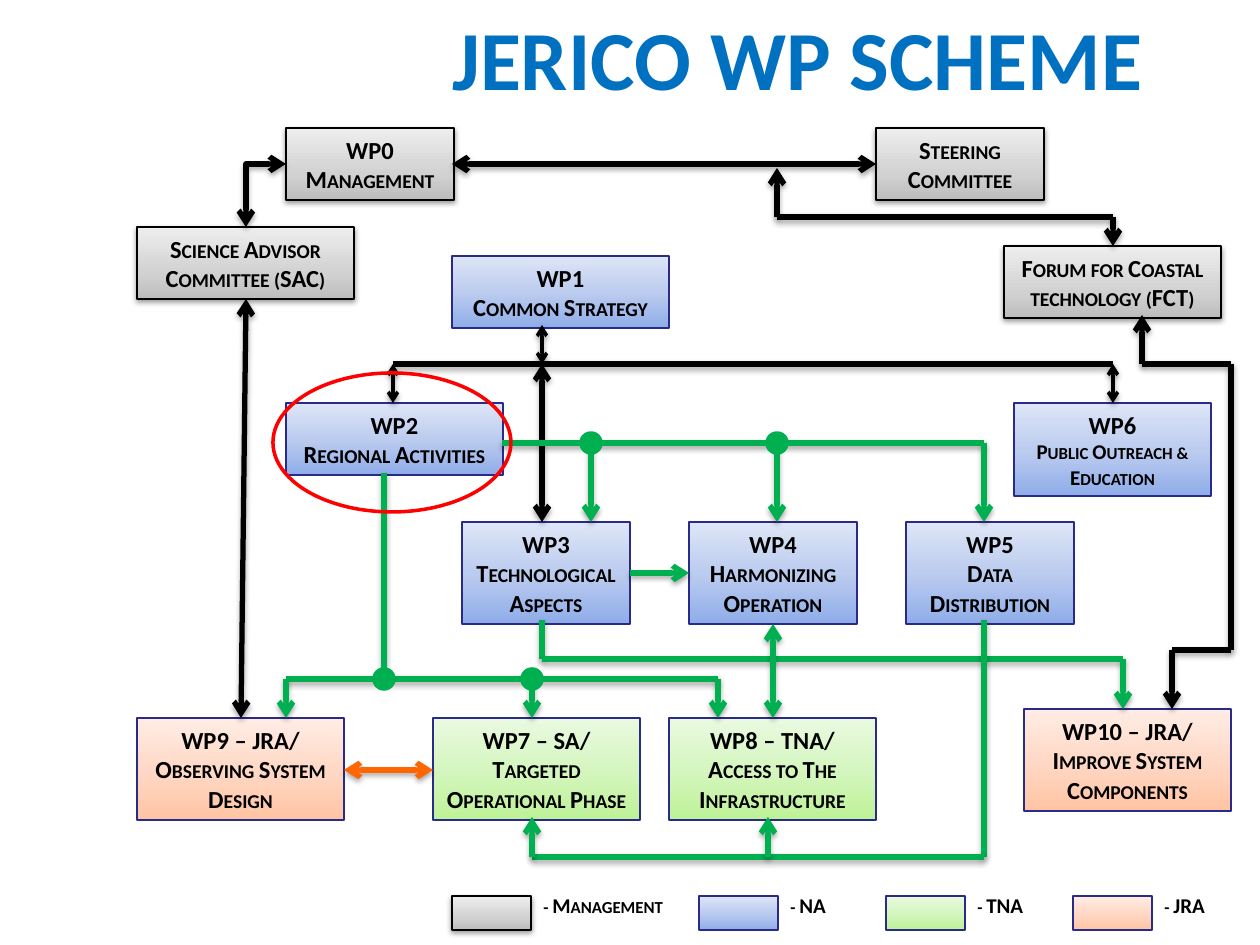
"""Build the JERICO work package scheme slide."""
from copy import deepcopy

from lxml import etree
from pptx import Presentation
from pptx.dml.color import RGBColor
from pptx.enum.shapes import MSO_CONNECTOR, MSO_SHAPE
from pptx.enum.text import MSO_ANCHOR, PP_ALIGN
from pptx.oxml.ns import qn
from pptx.util import Emu, Pt

RECTANGLE, OVAL = MSO_SHAPE.RECTANGLE, MSO_SHAPE.OVAL
JUNCTION = MSO_SHAPE.FLOWCHART_CONNECTOR
STRAIGHT, ELBOW = MSO_CONNECTOR.STRAIGHT, MSO_CONNECTOR.ELBOW
CENTER, LEFT = PP_ALIGN.CENTER, PP_ALIGN.LEFT
TOP = MSO_ANCHOR.TOP

BLACK = RGBColor(0x00, 0x00, 0x00)
NAVY = RGBColor(0x2A, 0x2A, 0x89)
GREEN = RGBColor(0x00, 0xB0, 0x50)
ORANGE = RGBColor(0xFF, 0x66, 0x00)
RED = RGBColor(0xFF, 0x00, 0x00)
TITLE_BLUE = RGBColor(0x00, 0x70, 0xC0)

FONT = "Calibri"
EMU_PER_PX = 914400 / 126
BOX_SHADOW = (38, 20000)
LINE_SHADOW = (35, 23000)

# kind: border, middle stop, gradient colours from bottom to top
KINDS = {
    "Management": (BLACK, 0.35, ("BDBDBD", "D1D1D1", "EEEEEE")),
    "NA": (NAVY, 0.5, ("8FADE9", "BCCCEF", "DEE6F7")),
    "TNA": (NAVY, 0.5, ("BEF297", "D5F6C0", "EAFAE0")),
    "JRA": (NAVY, 0.5, ("FFC4A3", "FFD9C7", "FFECE4")),
}

LEGEND = [("Management", 452, 150), ("NA", 699, 79), ("TNA", 886, 88), ("JRA", 1073, 79)]

BOXES = [
    ("Management", (286, 128, 168, 72), "WP0", "Management", 14),
    ("Management", (876, 128, 168, 72), "", "Steering Committee", 14),
    ("Management", (1004, 246, 217, 72), "", "Forum for Coastal technology (FCT)", 14),
    ("Management", (137, 227, 217, 72), "", "Science Advisor Committee (SAC)", 14),
    ("NA", (452, 256, 217, 72), "WP1", "Common Strategy", 14),
    ("NA", (286, 403, 217, 72), "WP2", "Regional Activities", 14),
    ("NA", (462, 522, 168, 102), "WP3", "Technological Aspects", 14),
    ("NA", (689, 522, 168, 102), "WP4", "Harmonizing Operation", 14),
    ("NA", (906, 522, 168, 102), "WP5", "Data Distribution", 14),
    ("NA", (1014, 403, 197, 93), "WP6", "Public Outreach & Education", 12),
    ("TNA", (433, 718, 207, 102), "WP7 – SA/", "Targeted Operational Phase", 14),
    ("TNA", (669, 718, 207, 102), "WP8 – TNA/", "Access to The Infrastructure", 14),
    ("JRA", (137, 718, 207, 102), "WP9 – JRA/", "Observing System Design", 14),
    ("JRA", (1024, 709, 207, 102), "WP10 – JRA/", "Improve System Components", 14),
]

# colour, width, then segments as (start, end, arrowheads)
LINKS = [
    (BLACK, 3, [
        ((452, 164), (876, 164), "<>"),
        ((1113, 217), (1113, 246), ">"),
        ((1113, 217), (777, 217), ""),
        ((777, 217), (777, 168), ">"),
        ((246, 299), (241, 718), "<>"),
        ((393, 364), (1113, 364), ""),
        ((542, 364), (542, 522), "<>"),
        ((1231, 364), (1231, 650), ""),
        ((1142, 364), (1231, 364), ""),
        ((1142, 364), (1142, 315), ">"),
        ((1172, 650), (1231, 650), ""),
        ((1172, 650), (1172, 709), ">"),
    ]),
    (BLACK, 2, [
        ((393, 364), (393, 403), "<>"),
        ((1113, 364), (1113, 403), "<>"),
        ((542, 325), (542, 364), "<>"),
    ]),
    (ORANGE, 3, [((344, 770), (433, 770), "<>")]),
    (GREEN, 3, [
        ((984, 443), (502, 443), ""),
        ((591, 443), (591, 522), ">"),
        ((777, 443), (777, 522), ">"),
        ((984, 443), (984, 522), ">"),
        ((630, 573), (689, 573), ">"),
        ((542, 620), (542, 659), ""),
        ((1123, 659), (542, 659), ""),
        ((1123, 659), (1123, 709), ">"),
        ((384, 473), (384, 677), ""),
        ((718, 679), (286, 679), ""),
        ((286, 679), (286, 718), ">"),
        ((532, 679), (532, 718), ">"),
        ((718, 679), (718, 718), ">"),
        ((773, 624), (773, 718), "<>"),
        ((984, 620), (984, 857), ""),
        ((532, 857), (984, 857), ""),
        ((532, 857), (532, 817), ">"),
        ((768, 857), (768, 817), ">"),
    ]),
]

JUNCTIONS = [(384, 679), (532, 679), (777, 443), (591, 443)]
JUNCTION_SIZE = 20


def px(*lengths):
    """Turn pixel lengths into EMU."""
    return [Emu(round(length * EMU_PER_PX)) for length in lengths]


def add_shadow(shape, alpha, distance):
    """Give a shape or connector a soft shadow straight below it."""
    properties = shape.element.spPr
    effects = properties.find(qn("a:effectLst"))
    if effects is None:
        effects = etree.SubElement(properties, qn("a:effectLst"))
    outer = etree.SubElement(effects, qn("a:outerShdw"), blurRad="40000",
                             dist=str(distance), dir="5400000", rotWithShape="0")
    colour = etree.SubElement(outer, qn("a:srgbClr"), val="000000")
    etree.SubElement(colour, qn("a:alpha"), val=str(alpha * 1000))


def add_box(shapes, kind, frame):
    """Add a rectangle with the gradient and border of its kind."""
    border, middle, colours = KINDS[kind]
    box = shapes.add_shape(RECTANGLE, *px(*frame))
    box.fill.gradient()
    box.fill.gradient_angle = 90
    stop_list = box.element.spPr.find(qn("a:gradFill")).find(qn("a:gsLst"))
    stop_list.append(deepcopy(stop_list[0]))
    for stop, position, colour in zip(box.fill.gradient_stops, (0, middle, 1), colours):
        stop.position = position
        stop.color.rgb = RGBColor.from_string(colour)
    box.line.color.rgb = border
    box.line.width = Pt(0.75)
    box.shadow.inherit = False
    if kind == "Management":
        add_shadow(box, *BOX_SHADOW)
    return box


def style(para, size, align=CENTER, colour=BLACK):
    """Set the bold face of a paragraph."""
    para.alignment = align
    para.font.name = FONT
    para.font.size = Pt(size)
    para.font.bold = True
    para.font.color.rgb = colour


def add_span(para, text, small_caps=True):
    """Append a run, in small capitals unless told otherwise."""
    span = para.add_run()
    span.text = text
    if small_caps:
        span.font._element.set("cap", "small")


def fill_box(box, heading, body, size):
    """Write the heading and the small-capital body of a box."""
    frame = box.text_frame
    frame.word_wrap = True
    para = frame.paragraphs[0]
    style(para, 14)
    if heading:
        add_span(para, heading, small_caps=False)
        if heading.endswith("/"):
            para.add_line_break()
        else:
            para = frame.add_paragraph()
            style(para, size)
    add_span(para, body)


def add_label(shapes, frame, text, size, align, colour, small_caps):
    """Add a one-line text box."""
    label = shapes.add_textbox(*px(*frame)).text_frame
    label.word_wrap = True
    label.vertical_anchor = TOP
    style(label.paragraphs[0], size, align, colour)
    add_span(label.paragraphs[0], text, small_caps)


def add_link(shapes, start, end, heads, colour, width, route=STRAIGHT):
    """Add a connector with a shadow and open arrowheads."""
    link = shapes.add_connector(route, *px(*start, *end))
    link.line.color.rgb = colour
    link.line.width = Pt(width)
    outline = link.element.spPr.find(qn("a:ln"))
    for sign, tag in (("<", "a:headEnd"), (">", "a:tailEnd")):
        if sign in heads:
            etree.SubElement(outline, qn(tag), type="arrow")
    add_shadow(link, *(LINE_SHADOW if width == 3 else BOX_SHADOW))
    return link


def main():
    """Build and save the deck."""
    deck = Presentation()
    deck.slide_width, deck.slide_height = px(1260, 945)
    shapes = deck.slides.add_slide(deck.slide_layouts[6]).shapes

    legend = shapes.add_group_shape().shapes
    for kind, left, width in LEGEND:
        add_box(legend, kind, (left, 896, 79, 34))
        add_label(legend, (left + 79, 886, width, 38), f"- {kind}", 12, LEFT, BLACK, True)

    add_label(shapes, (364, 0, 867, 115), "JERICO WP SCHEME", 48, CENTER, TITLE_BLUE, False)
    for kind, frame, heading, body, size in BOXES:
        fill_box(add_box(shapes, kind, frame), heading, body, size)

    corner = add_link(shapes, (286, 164), (246, 227), "<>", BLACK, 3, ELBOW)
    corner.element.spPr.find(qn("a:prstGeom")).set("prst", "bentConnector2")
    for colour, width, segments in LINKS:
        for start, end, heads in segments:
            add_link(shapes, start, end, heads, colour, width)

    for x, y in JUNCTIONS:
        half = JUNCTION_SIZE // 2
        dot = shapes.add_shape(JUNCTION, *px(x - half, y - half, JUNCTION_SIZE, JUNCTION_SIZE))
        dot.fill.solid()
        dot.fill.fore_color.rgb = dot.line.color.rgb = GREEN
        dot.line.width = Pt(2)
        dot.shadow.inherit = False

    highlight = shapes.add_shape(OVAL, *px(273, 373, 238, 139))
    highlight.fill.background()
    highlight.line.color.rgb = RED
    highlight.line.width = Pt(2)
    highlight.shadow.inherit = False

    deck.save("out.pptx")


if __name__ == "__main__":
    main()
